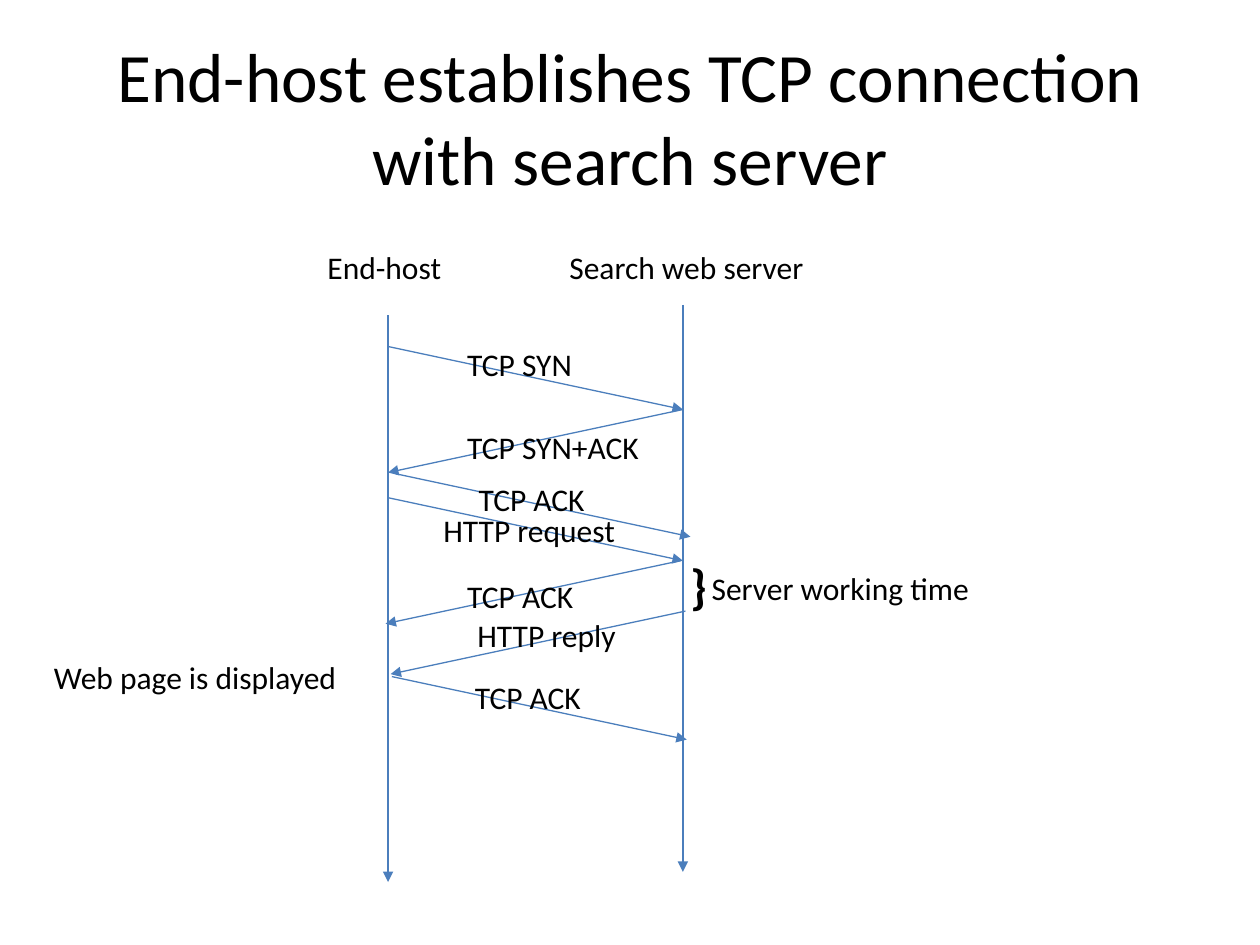
from lxml.etree import SubElement
from pptx import Presentation
from pptx.dml.color import RGBColor
from pptx.enum.shapes import MSO_CONNECTOR
from pptx.enum.text import MSO_ANCHOR, MSO_AUTO_SIZE, PP_ALIGN
from pptx.oxml.ns import qn
from pptx.util import Inches, Pt

TITLE = "End-host establishes TCP connection with search server"
TITLE_BOX = (0.5, 0.3, 9, 1.25)
BLACK, BLUE = "000000", "4B7EBC"
HOST_X, SERVER_X = 3.08, 5.42
TIMELINE_LENGTH, MESSAGE_DROP = 4.5, 0.5
LABEL_HEIGHT = 0.4

TIMELINES = [(HOST_X, 2.5), (SERVER_X, 2.42)]

# text, direction, start y, sideways shift, label left, top, width
MESSAGES = [
    ("TCP SYN", "to server", 2.75, 0, 3.61, 2.69, 1.04),
    ("TCP SYN+ACK", "to host", 3.25, 0, 3.61, 3.35, 1.58),
    ("TCP ACK", "to server", 3.76, 0.06, 3.7, 3.76, 1.05),
    ("HTTP request", "to server", 3.95, 0, 3.42, 4.01, 1.58),
    ("TCP ACK", "to host", 4.45, -0.02, 3.61, 4.53, 1.05),
    ("TCP ACK", "to server", 5.37, 0.03, 3.67, 5.33, 1.05),
    ("HTTP reply", "to host", 4.85, 0.02, 3.69, 4.84, 1.31),
]

LABELS = [
    ("End-host", 2.5, 1.92, 1.11),
    ("Search web server", 4.42, 1.92, 2.12),
    ("Server working time", 5.55, 4.47, 2.27),
    ("Web page is displayed", 0.33, 5.17, 2.47),
]


def rgb(value):
    return RGBColor.from_string(value)


def format_run(r, size, bold=False):
    for name, value in {"name": "Calibri", "size": Pt(size), "bold": bold}.items():
        setattr(r.font, name, value)
    r.font.color.rgb = rgb(BLACK)


def add_label(s, text, left, top, width, height=LABEL_HEIGHT, size=18, bold=False):
    box = s.shapes.add_textbox(*map(Inches, (left, top, width, height)))
    tf = box.text_frame
    tf.word_wrap = False
    tf.auto_size = MSO_AUTO_SIZE.SHAPE_TO_FIT_TEXT
    r = tf.paragraphs[0].add_run()
    r.text = text
    format_run(r, size, bold)


def add_arrow(s, x1, y1, x2, y2):
    line = s.shapes.add_connector(
        MSO_CONNECTOR.STRAIGHT, *map(Inches, (x1, y1, x2, y2)))
    line.line.color.rgb = rgb(BLUE)
    line.line.width = Pt(0.75)
    SubElement(line.line._get_or_add_ln(), qn("a:tailEnd"), type="triangle")
    SubElement(line._element.spPr, qn("a:effectLst"))


def add_title(s):
    sp = s.shapes.title
    for name, value in zip(("left", "top", "width", "height"), TITLE_BOX):
        setattr(sp, name, Inches(value))
    tf = sp.text_frame
    tf.word_wrap = True
    tf.vertical_anchor = MSO_ANCHOR.MIDDLE
    p = tf.paragraphs[0]
    p.alignment = PP_ALIGN.CENTER
    r = p.add_run()
    r.text = TITLE
    format_run(r, 39.6)


def main():
    prs = Presentation()
    prs.slide_width, prs.slide_height = Inches(10), Inches(7.5)
    s = prs.slides.add_slide(prs.slide_layouts[5])
    add_title(s)
    for x, y in TIMELINES:
        add_arrow(s, x, y, x, y + TIMELINE_LENGTH)
    for text, direction, y, shift, left, top, width in MESSAGES:
        ends = (HOST_X, SERVER_X) if direction == "to server" else (SERVER_X, HOST_X)
        x1, x2 = (x + shift for x in ends)
        add_arrow(s, x1, y, x2, y + MESSAGE_DROP)
        add_label(s, text, left, top, width)
    for label in LABELS:
        add_label(s, *label)
    add_label(s, "}", 5.38, 4.36, 0.34, 0.57, size=28, bold=True)
    prs.save("out.pptx")


if __name__ == "__main__":
    main()
